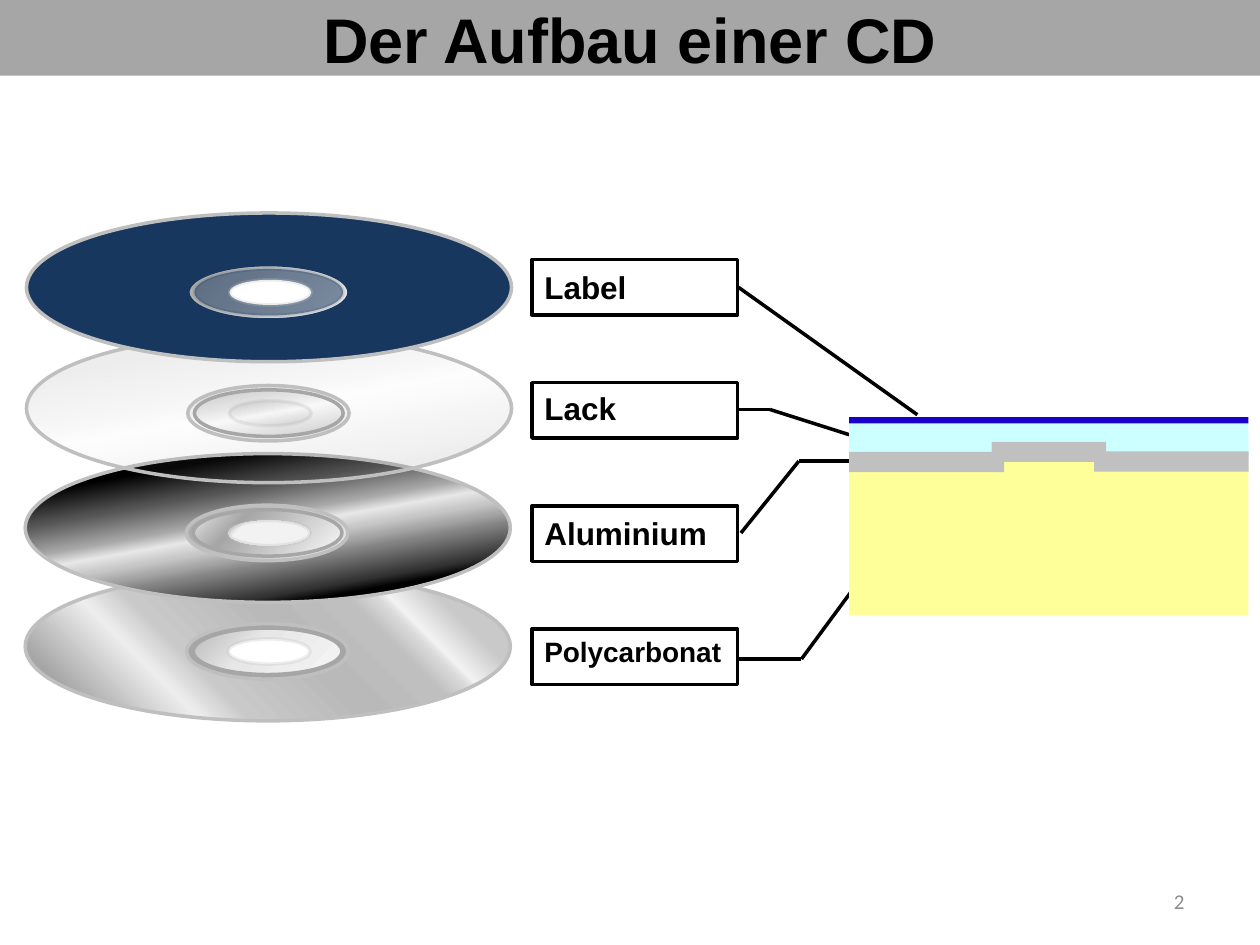
import pptx
import pptx.dml.color
import pptx.enum.shapes
import pptx.enum.text
import pptx.oxml.ns
import pptx.util
from lxml import etree

Pt = pptx.util.Pt
RGB = pptx.dml.color.RGBColor
qn = pptx.oxml.ns.qn
SHAPE = pptx.enum.shapes.MSO_SHAPE
ALIGN = pptx.enum.text.PP_ALIGN
ANCHOR = pptx.enum.text.MSO_ANCHOR

BLACK = RGB(0x00, 0x00, 0x00)
WHITE = RGB(0xFF, 0xFF, 0xFF)
NAVY = RGB(0x17, 0x37, 0x5E)
EDGE = RGB(0xBF, 0xBF, 0xBF)
GREY = RGB(0xA6, 0xA6, 0xA6)
NUMBER_GREY = RGB(0x8C, 0x8C, 0x8C)
SMOKE = RGB(0xF2, 0xF2, 0xF2)
PALE = RGB(0xE7, 0xE7, 0xE7)
MIST = RGB(0xED, 0xED, 0xED)
SILVER = RGB(0xC9, 0xC9, 0xC9)
STEEL = RGB(0xB9, 0xB9, 0xB9)
LIGHT = RGB(0xD9, 0xD9, 0xD9)
CHROME = RGB(0xC7, 0xC7, 0xC7)
DIM = RGB(0x82, 0x82, 0x82)
DARK = RGB(0x53, 0x53, 0x53)
COAL = RGB(0x33, 0x33, 0x33)
YELLOW = RGB(0xFF, 0xFF, 0x99)
CYAN = RGB(0xCC, 0xFF, 0xFF)
METAL = RGB(0xC0, 0xC0, 0xC0)
BLUE = RGB(0x19, 0x01, 0xC9)

BOTTOM_LEFT = ("0", "100000", "100000", "0")
BOTTOM_RIGHT = ("100000", "100000", "0", "0")


class Gradient:
    """Stops are (percent, colour); focus, if given, makes it radial."""

    def __init__(self, stops, angle=0, focus=None, opacity=100):
        self.stops, self.angle = stops, angle
        self.focus, self.opacity = focus, opacity

    def apply(self, shape):
        shape.fill.gradient()
        grad = shape._element.spPr.find(qn("a:gradFill"))
        grad.clear()
        stop_list = etree.SubElement(grad, qn("a:gsLst"))
        for position, colour in self.stops:
            stop = etree.SubElement(stop_list, qn("a:gs"), pos=str(position * 1000))
            value = etree.SubElement(stop, qn("a:srgbClr"), val=str(colour))
            if self.opacity < 100:
                set_opacity(value, self.opacity)
        if self.focus:
            radial = etree.SubElement(grad, qn("a:path"))
            radial.set("path", "circle")
            etree.SubElement(radial, qn("a:fillToRect"), dict(zip("ltrb", self.focus)))
        else:
            etree.SubElement(grad, qn("a:lin"), ang=str(self.angle * 60000), scaled="0")


def set_opacity(colour_element, percent):
    etree.SubElement(colour_element, qn("a:alpha"), val=str(percent * 1000))


class SlideBuilder:
    font = "Arial"
    line_width = Pt(2)

    def __init__(self, page):
        self.page = page

    def add_span(self, frame, text, size, colour=BLACK, bold=True, font=None, align=None):
        para = frame.paragraphs[0]
        para.alignment = align
        span = para.add_run()
        span.text = text
        span.font.size = Pt(size)
        span.font.name = font or self.font
        span.font.bold = bold
        span.font.color.rgb = colour

    def title(self, text, height):
        box = self.page.shapes.title
        box.left, box.top, box.width, box.height = Pt(0), Pt(0), Pt(720), Pt(height)
        box.fill.solid()
        box.fill.fore_color.rgb = GREY
        box.text_frame.vertical_anchor = ANCHOR.MIDDLE
        self.add_span(box.text_frame, text, 36, align=ALIGN.CENTER)

    def text(self, text, left, top, width, height, size, anchor=ANCHOR.TOP, **style):
        box = self.page.shapes.add_textbox(Pt(left), Pt(top), Pt(width), Pt(height))
        box.text_frame.word_wrap = True
        box.text_frame.vertical_anchor = anchor
        self.add_span(box.text_frame, text, size, **style)

    def shape(self, kind, left, top, width, height, fill=None, line=None,
              fill_opacity=100, line_opacity=100):
        shape = self.page.shapes.add_shape(kind, Pt(left), Pt(top), Pt(width), Pt(height))
        shape.shadow.inherit = False
        if fill is None:
            shape.fill.background()
        elif isinstance(fill, Gradient):
            fill.apply(shape)
        else:
            shape.fill.solid()
            shape.fill.fore_color.rgb = fill
            if fill_opacity < 100:
                set_opacity(shape._element.spPr.find(qn("a:solidFill"))[0], fill_opacity)
        if line is None:
            shape.line.fill.background()
        else:
            shape.line.color.rgb = line
            shape.line.width = self.line_width
            if line_opacity < 100:
                outline = shape._element.spPr.find(qn("a:ln"))
                set_opacity(outline.find(qn("a:solidFill"))[0], line_opacity)

    def disc(self, left, top, surface, ring, inner, hole, ring_line=EDGE,
             inner_line=GREY, inner_opacity=100, inner_line_opacity=100):
        oval = SHAPE.OVAL
        self.shape(oval, left, top, 277.2, 85, surface, EDGE)
        self.shape(oval, left + 92.2, top + 29.5, 92.2, 31.7, ring, ring_line)
        self.shape(oval, left + 96, top + 32, 85, 26.6, inner, inner_line,
                   inner_opacity, inner_line_opacity)
        self.shape(oval, left + 116, top + 38.2, 46.8, 14.4, hole, EDGE, line_opacity=28)

    def leader(self, *points):
        """Join the points with straight lines."""
        for start, end in zip(points, points[1:]):
            line = self.page.shapes.add_connector(
                pptx.enum.shapes.MSO_CONNECTOR.STRAIGHT, *map(Pt, start + end))
            line.line.color.rgb = BLACK
            line.line.width = self.line_width
            etree.SubElement(line._element.spPr, qn("a:effectLst"))


def draw_discs(builder):
    mirror_stops = [(17, BLACK), (31, DARK), (44, GREY), (50, PALE), (56, CHROME),
                    (61, GREY), (66, DIM), (79, COAL), (84, BLACK)]
    plastic = Gradient([(11, GREY), (28, MIST), (36, SILVER), (55, STEEL), (70, EDGE),
                        (75, LIGHT), (77, SMOKE), (85, SILVER)], focus=BOTTOM_LEFT)
    plastic_inner = Gradient([(8, GREY), (10, SMOKE), (60, PALE), (95, EDGE)],
                             focus=BOTTOM_RIGHT)
    mirror = Gradient(mirror_stops, angle=80)
    lacquer = Gradient(mirror_stops, angle=80, opacity=7)
    ring = Gradient([(2, SMOKE), (3, GREY), (92, PALE)], angle=45)
    mirror_inner = Gradient([(6, SMOKE), (70, GREY), (99, PALE)], focus=BOTTOM_RIGHT)
    mirror_hole = Gradient([(0, GREY), (16, PALE), (19, SMOKE)], angle=45)

    builder.disc(14.4, 326.9, plastic, GREY, plastic_inner, WHITE)
    builder.disc(14.4, 259.2, mirror, ring, mirror_inner, mirror_hole)
    builder.disc(15.1, 190.8, lacquer, lacquer, lacquer, lacquer)
    builder.disc(15.1, 121.7, NAVY, ring, NAVY, WHITE, ring_line=NAVY, inner_line=NAVY,
                 inner_opacity=52, inner_line_opacity=12)


def draw_labels(builder):
    labels = [("Label", 18, 149.8), ("Lack", 18, 218.9),
              ("Aluminium", 18, 290.2), ("Polycarbonat", 16, 359.3)]
    for row, (name, size, text_top) in enumerate(labels):
        builder.text(name, 304, text_top, 136, 28.8, size)
        builder.shape(SHAPE.RECTANGLE, 304, 148.3 + 70.4 * row, 117.5, 31.7, line=BLACK)
    builder.leader((422, 164.2), (524.2, 237))
    builder.leader((422, 234), (440, 234), (485.3, 248.4))
    builder.leader((423.4, 304.6), (456.5, 263.5), (486.7, 263.5))
    builder.leader((422, 376.6), (458, 376.6), (486.7, 337.7))


def draw_cross_section(builder):
    left, width = 485.3, 228.2
    layers = [
        (YELLOW, left, 265.7, width, 85.7),
        (YELLOW, 573.8, 257.8, 52.6, 23),
        (CYAN, left, 241.9, width, 11.5),
        (CYAN, left, 253.4, 81.4, 7.9),
        (CYAN, 627.8, 253.4, 85.7, 7.9),
        (METAL, left, 258.3, 88.5, 11.5),
        (METAL, 625.3, 258, 88.2, 11.5),
        (METAL, 566.6, 252.5, 65.5, 11.5),
        (BLUE, left, 238.3, width, 3.6),
    ]
    for colour, *place in layers:
        builder.shape(SHAPE.RECTANGLE, *place, fill=colour)


def main():
    deck = pptx.Presentation()
    deck.slide_width, deck.slide_height = Pt(720), Pt(540)
    builder = SlideBuilder(deck.slides.add_slide(deck.slide_layouts[5]))
    builder.title("Der Aufbau einer CD", 43.2)
    draw_discs(builder)
    draw_labels(builder)
    draw_cross_section(builder)
    builder.text("2", 516, 500.5, 168, 28.8, 12, ANCHOR.MIDDLE, colour=NUMBER_GREY,
                 bold=False, font="Calibri", align=ALIGN.RIGHT)
    deck.save("out.pptx")


if __name__ == "__main__":
    main()
